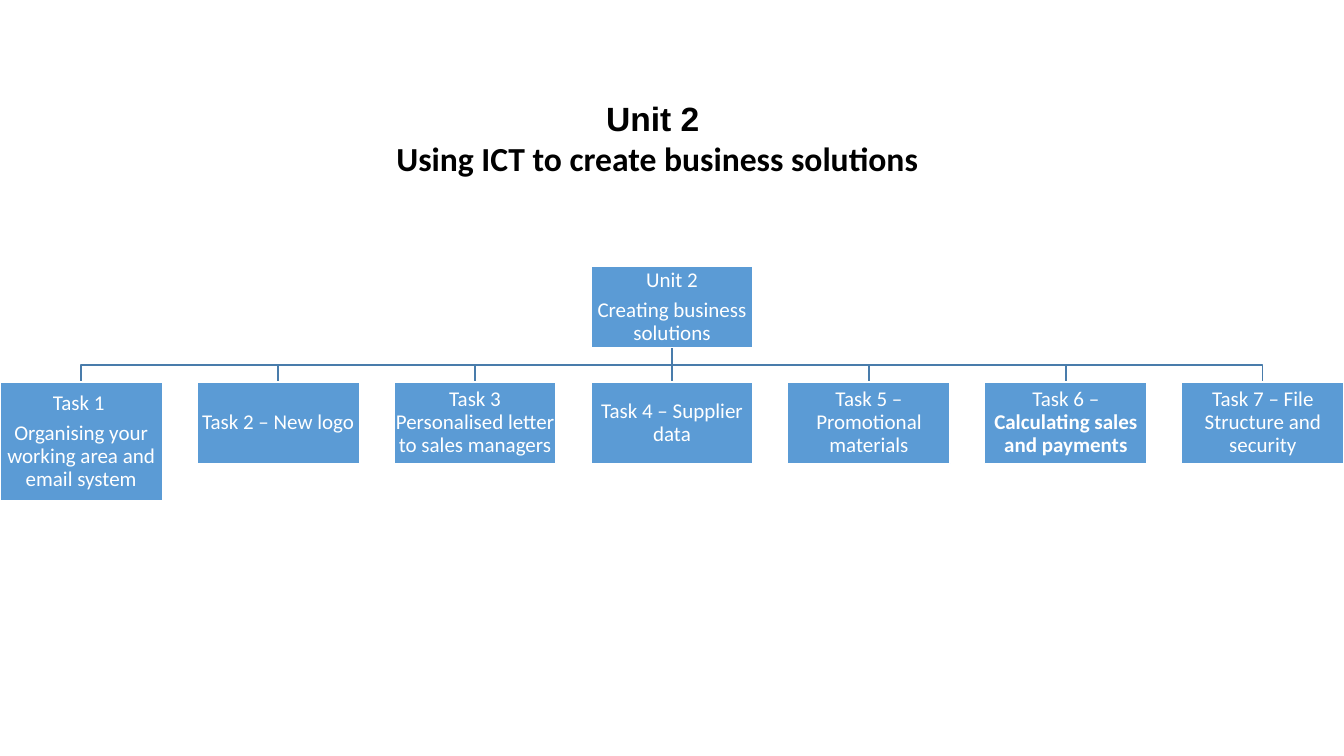
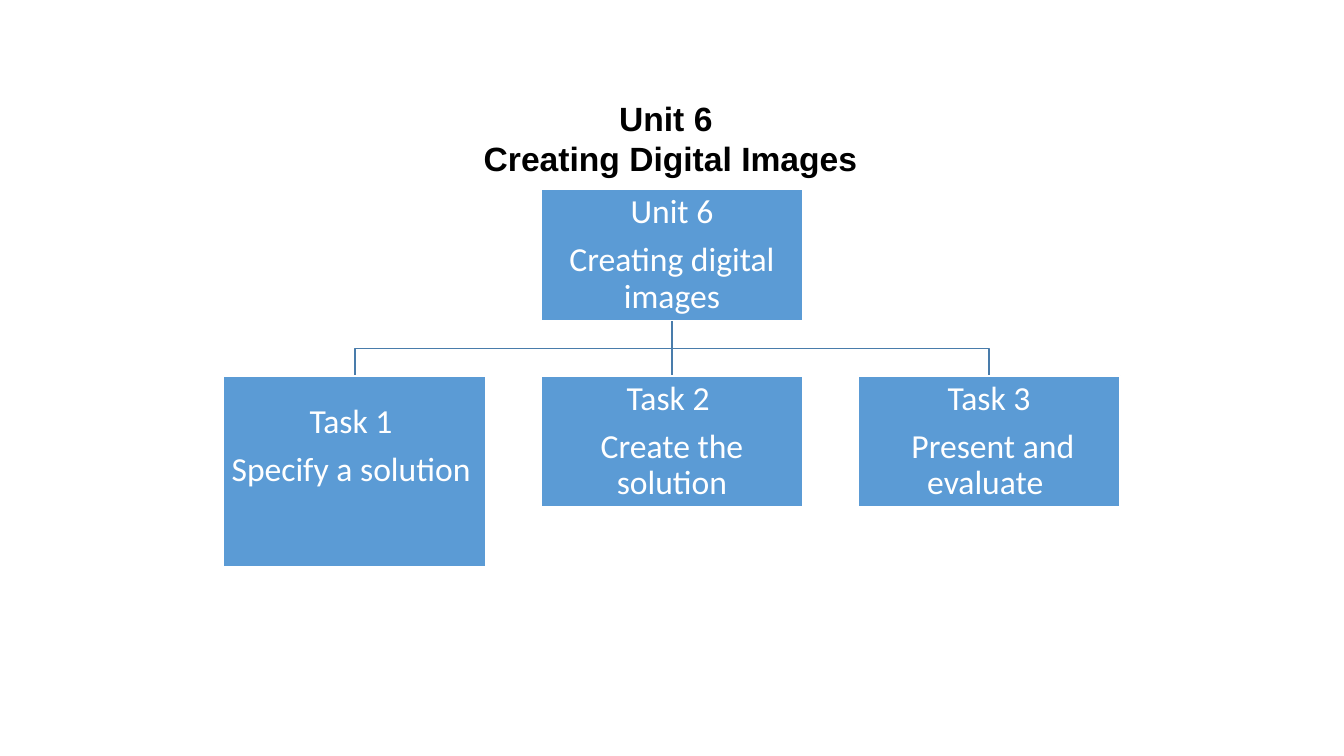
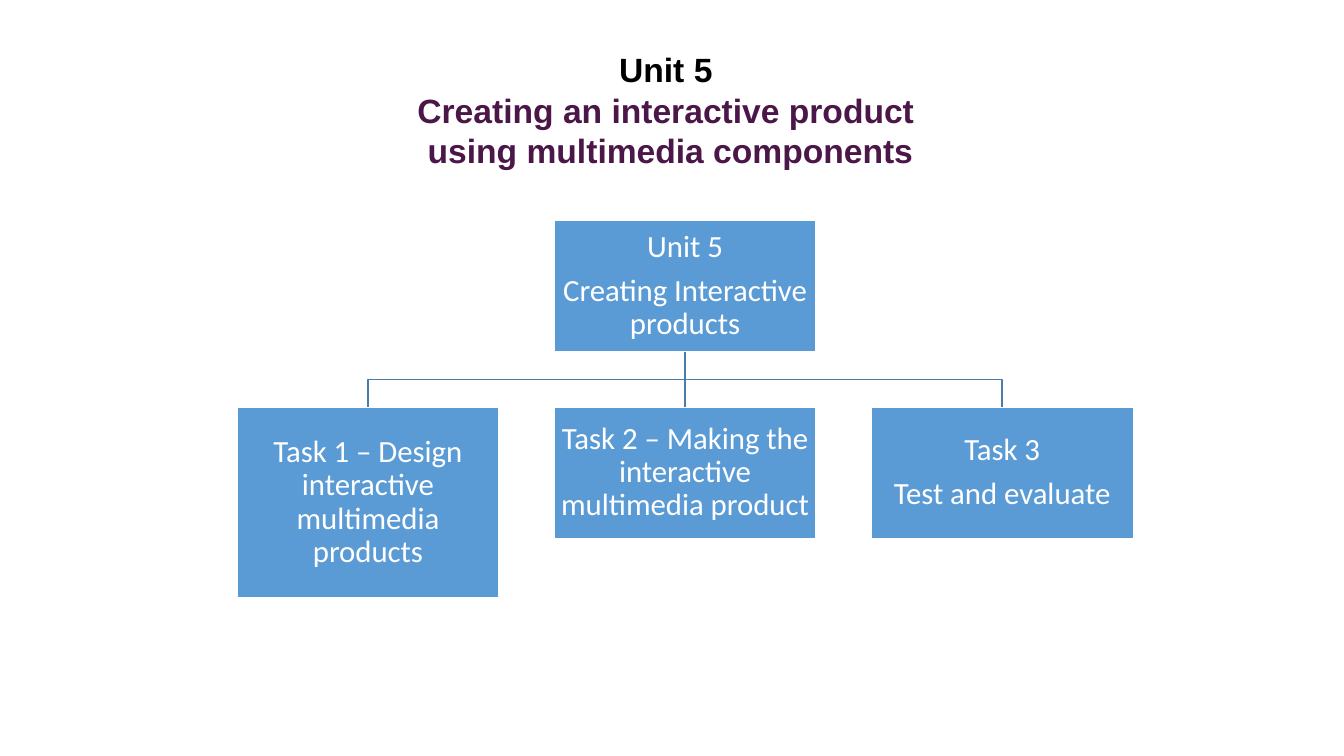
from dataclasses import dataclass
from lxml import etree
from pptx import Presentation
from pptx.dml.color import RGBColor
from pptx.enum.shapes import MSO_CONNECTOR, MSO_SHAPE
from pptx.enum.text import MSO_ANCHOR, PP_ALIGN
from pptx.oxml.ns import qn
from pptx.util import Pt

RECT = MSO_SHAPE.RECTANGLE
LINE = MSO_CONNECTOR.STRAIGHT
MIDDLE = MSO_ANCHOR.MIDDLE
CENTER = PP_ALIGN.CENTER
SCALE = 9144


@dataclass(frozen=True)
class Theme:
    blue: str = "5B9BD5"
    steel: str = "497CAB"
    white: str = "FFFFFF"
    black: str = "000000"
    plum: str = "4B1748"
    head: str = "Arial"
    body: str = "Calibri"
    title: int = 24
    large: int = 24
    mid: int = 22
    small: int = 15
    rule: int = 1
    lead: float = 0.9
    after: float = 0.35


@dataclass(frozen=True)
class Chart:
    left: int
    top: int
    width: int
    cell: tuple
    tall: int
    gap: int
    size: int
    inset: int
    root: list
    tasks: list
    lift: int = 0


THEME = Theme()


def px(value):
    return round(value * SCALE)


def tone(code):
    return RGBColor.from_string(code)


def add_run(par, text, font, size, code, bold=False):
    run = par.add_run()
    run.text = text
    run.font.name = font
    run.font.size = Pt(size)
    run.font.bold = bold
    run.font.color.rgb = tone(code)


def add_par(frame, index):
    par = frame.add_paragraph() if index else frame.paragraphs[0]
    par.alignment = CENTER
    return par


def plain(*lines):
    return [[(line, False)] for line in lines]


def add_title(slide, box, lines):
    frame = slide.shapes.add_textbox(*map(px, box)).text_frame
    frame.word_wrap = True
    for i, (parts, font, code) in enumerate(lines):
        par = add_par(frame, i)
        for j, part in enumerate(parts):
            if j:
                par.add_line_break()
            add_run(par, part, font, THEME.title, code, True)


def add_box(slide, box, lines, size, inset, lift=0):
    shape = slide.shapes.add_shape(RECT, *map(px, box))
    shape.shadow.inherit = False
    shape.fill.solid()
    shape.fill.fore_color.rgb = tone(THEME.blue)
    shape.line.color.rgb = tone(THEME.white)
    shape.line.width = Pt(THEME.rule)
    frame = shape.text_frame
    frame.word_wrap = True
    frame.vertical_anchor = MIDDLE
    frame.margin_left = frame.margin_right = frame.margin_top = px(inset)
    frame.margin_bottom = px(inset + lift)
    for i, runs in enumerate(lines):
        par = add_par(frame, i)
        par.line_spacing = THEME.lead
        par.space_after = Pt(round(size * THEME.after, 2))
        for text, bold in runs:
            add_run(par, text, THEME.body, size, THEME.white, bold)


def add_branch(slide, start, end):
    (x, y), (far, low) = start, end
    if x == far:
        branch = slide.shapes.add_connector(LINE, px(x), px(y), px(far), px(low))
        etree.SubElement(branch.element.spPr, qn("a:effectLst"))
    else:
        half = (y + low) / 2
        bends = [(x, half), (far, half), (far, low)]
        form = slide.shapes.build_freeform(px(x), px(y))
        form.add_line_segments([(px(a), px(b)) for a, b in bends], close=False)
        branch = form.convert_to_shape()
        branch.shadow.inherit = False
        branch.fill.background()
    branch.line.color.rgb = tone(THEME.steel)
    branch.line.width = Pt(THEME.rule)


def add_chart(slide, chart):
    wide, high = chart.cell
    step = (chart.width - wide) / (len(chart.tasks) - 1)
    mid = chart.left + chart.width / 2
    base = chart.top + high
    row = base + chart.gap
    lefts = [chart.left + i * step for i in range(len(chart.tasks))]
    for left in reversed(lefts):
        add_branch(slide, (mid, base), (left + wide / 2, row))
    root = (mid - wide / 2, chart.top, wide, high)
    add_box(slide, root, chart.root, chart.size, chart.inset)
    for i, (left, lines) in enumerate(zip(lefts, chart.tasks)):
        tall, lift = (high, 0) if i else (chart.tall, chart.lift)
        add_box(slide, (left, row, wide, tall), lines, chart.size, chart.inset, lift)


def main():
    deck = Presentation()
    deck.slide_width, deck.slide_height = px(1333), px(750)
    head, body, black = THEME.head, THEME.body, THEME.black
    trio = dict(width=889, cell=(260, 130), tall=189, gap=55, inset=2)
    pages = [
        (
            (325, 92, 654, 91),
            [
                (["Unit 2 "], head, black),
                (["Using ICT to create business solutions"], body, black),
            ],
            Chart(
                left=0, top=264, width=1333, cell=(161, 81), tall=118, gap=34,
                size=THEME.small, inset=1,
                root=plain("Unit 2", "Creating business solutions"),
                tasks=[
                    plain("Task 1 ", "Organising your working area and email system"),
                    plain("Task 2 – New logo"),
                    plain("Task 3 Personalised letter to sales managers"),
                    plain("Task 4 – Supplier data"),
                    plain("Task 5 – Promotional materials"),
                    [[("Task 6 – ", False), ("Calculating sales and payments", True)]],
                    plain("Task 7 – File Structure and security"),
                ],
            ),
        ),
        (
            (338, 92, 654, 121),
            [
                (["Unit 6 "], head, black),
                (["Creating Digital Images"], head, black),
            ],
            Chart(
                left=222, top=188, size=THEME.large, lift=48, **trio,
                root=plain("Unit 6", "Creating digital images"),
                tasks=[
                    plain("Task 1 ", "Specify a solution "),
                    plain("Task 2 ", "Create the solution"),
                    plain("Task 3", " Present and evaluate "),
                ],
            ),
        ),
        (
            (338, 44, 654, 131),
            [
                (["Unit 5 "], head, black),
                (
                    ["Creating an interactive product ", "using multimedia components"],
                    head, THEME.plum,
                ),
            ],
            Chart(
                left=235, top=219, size=THEME.mid, **trio,
                root=plain("Unit 5", "Creating Interactive products"),
                tasks=[
                    plain("Task 1 – Design interactive multimedia products"),
                    plain("Task 2 – Making the interactive multimedia product"),
                    plain("Task 3", " Test and evaluate "),
                ],
            ),
        ),
    ]
    for box, lines, chart in pages:
        slide = deck.slides.add_slide(deck.slide_layouts[6])
        add_title(slide, box, lines)
        add_chart(slide, chart)
    deck.save("out.pptx")


if __name__ == "__main__":
    main()
